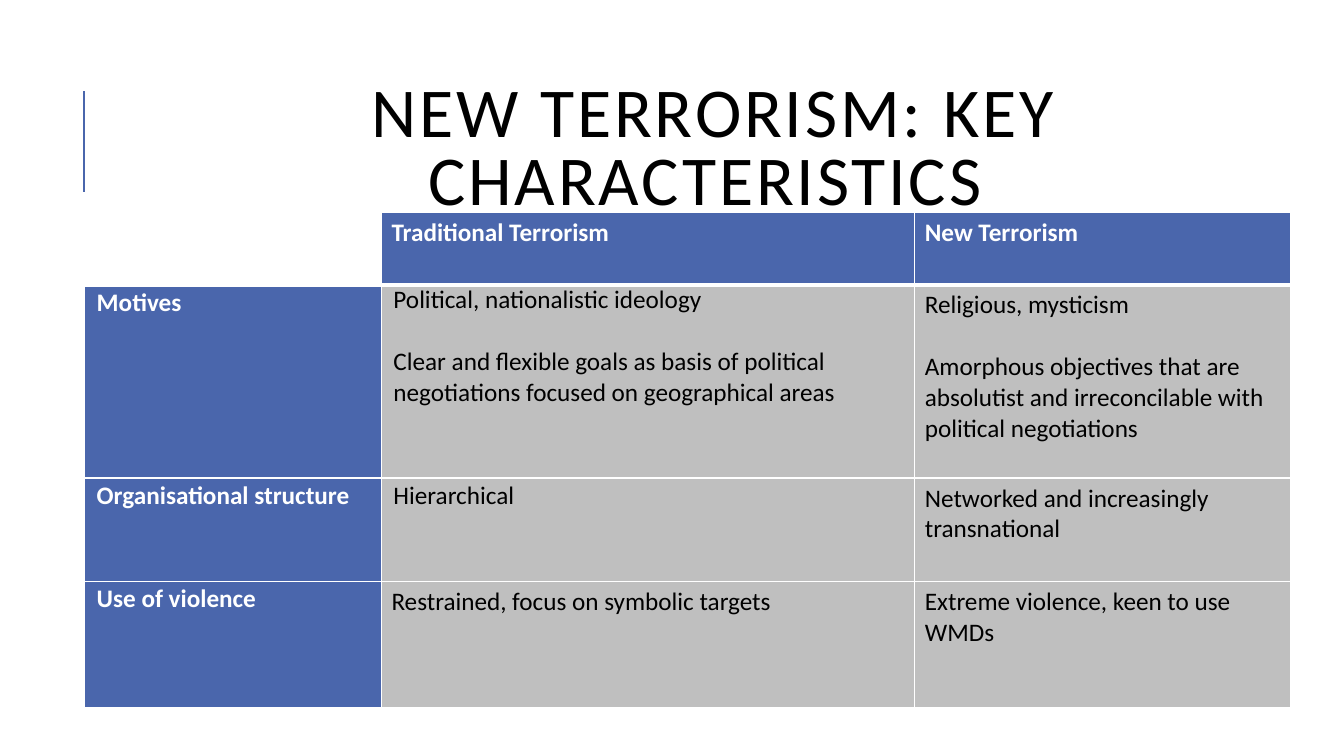
import pptx
import pptx.dml.color
import pptx.enum.shapes
import pptx.enum.text
import pptx.oxml
import pptx.oxml.ns
import pptx.util

Pt = pptx.util.Pt
RGB = pptx.dml.color.RGBColor.from_string
ALIGN = pptx.enum.text.PP_ALIGN
ANCHOR = pptx.enum.text.MSO_ANCHOR

THEME = {
    "font": "Calibri",
    "blue": "4A66AC",
    "grey": "BFBFBF",
    "white": "FFFFFF",
    "black": "000000",
    "title_size": 50,
    "table_size": 18,
}


def write(frame, text, size=THEME["table_size"], color=THEME["black"], bold=False,
          align=ALIGN.LEFT, line_spacing=1.0, gap=0, after=0, tracking=0):
    frame.word_wrap = True
    for number, line in enumerate(text.split("\n")):
        paragraph = frame.add_paragraph() if number else frame.paragraphs[0]
        paragraph.alignment = align
        paragraph.line_spacing = line_spacing
        paragraph.space_before = Pt(gap if number else 0)
        paragraph.space_after = Pt(after)
        run = paragraph.add_run()
        run.text = line
        run.font.name = THEME["font"]
        run.font.size = Pt(size)
        run.font.bold = bold
        run.font.color.rgb = RGB(color)
        if tracking:
            run.font._element.set("spc", str(tracking * 100))


def outline(cell, bottom_width):
    properties = cell._tc.get_or_add_tcPr()
    widths = {"lnL": 1, "lnR": 1, "lnT": 1, "lnB": bottom_width}
    for position, (side, width) in enumerate(widths.items()):
        border = pptx.oxml.parse_xml(
            f'<a:{side} {pptx.oxml.ns.nsdecls("a")} w="{Pt(width)}">'
            f'<a:solidFill><a:srgbClr val="{THEME["white"]}"/></a:solidFill></a:{side}>')
        properties.insert(position, border)


deck = pptx.Presentation()
deck.slide_width, deck.slide_height = Pt(960), Pt(540)
slide = deck.slides.add_slide(deck.slide_layouts[6])

accent = slide.shapes.add_connector(
    pptx.enum.shapes.MSO_CONNECTOR.STRAIGHT, Pt(60), Pt(137), Pt(60), Pt(65))
accent.line.color.rgb = RGB(THEME["blue"])
accent.line.width = Pt(1.5)
accent._element.spPr.append(
    pptx.oxml.parse_xml(f'<a:effectLst {pptx.oxml.ns.nsdecls("a")}/>'))

title = slide.shapes.add_textbox(Pt(80.6), Pt(49), Pt(859.7), Pt(118)).text_frame
title.vertical_anchor = ANCHOR.MIDDLE
write(title, "NEW TERRORISM: KEY CHARACTERISTICS ", size=THEME["title_size"],
      align=ALIGN.CENTER, line_spacing=0.8, after=6, tracking=2)

comparison = [
    ["", "Traditional Terrorism", "New Terrorism"],
    ["Motives",
     "Political, nationalistic ideology\nClear and flexible goals as basis of political "
     "negotiations focused on geographical areas",
     "Religious, mysticism\nAmorphous objectives that are absolutist and irreconcilable "
     "with political negotiations"],
    ["Organisational structure", "Hierarchical", "Networked and increasingly transnational"],
    ["Use of violence", "Restrained, focus on symbolic targets",
     "Extreme violence, keen to use WMDs"],
]
column_widths = [212, 381, 268.5]
row_heights = [52, 138, 74, 90]
flush_cells = {(1, 0), (2, 0), (3, 0), (1, 1), (2, 1)}

table = slide.shapes.add_table(
    len(row_heights), len(column_widths), Pt(60.5), Pt(151.5),
    Pt(sum(column_widths)), Pt(sum(row_heights))).table
for column, width in zip(table.columns, column_widths):
    column.width = Pt(width)
for row, height in zip(table.rows, row_heights):
    row.height = Pt(height)

for r, entries in enumerate(comparison):
    for c, entry in enumerate(entries):
        cell = table.cell(r, c)
        heading = r == 0 or c == 0
        fill = "white" if r == c == 0 else "blue" if heading else "grey"
        cell.fill.solid()
        cell.fill.fore_color.rgb = RGB(THEME[fill])
        outline(cell, 3 if r == 0 else 1)
        if (r, c) in flush_cells:
            cell.margin_left = cell.margin_right = Pt(8.6)
            cell.margin_top = cell.margin_bottom = Pt(0)
        if entry:
            write(cell.text_frame, entry, bold=heading, gap=22,
                  color=THEME["white" if heading else "black"],
                  line_spacing=1.07 if (r, c) in flush_cells - {(1, 1)} else 1.0)

deck.save("out.pptx")
